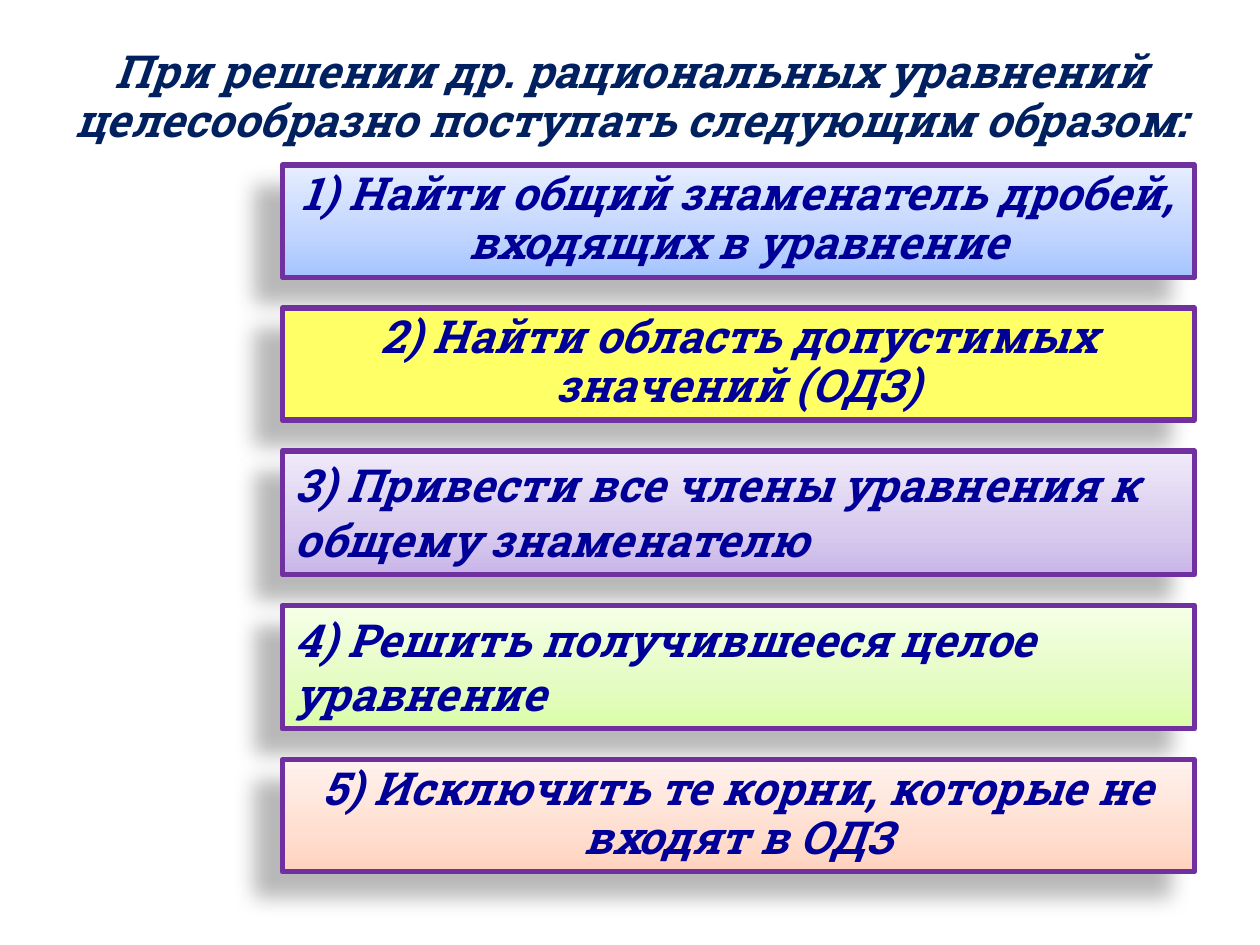
from lxml import etree
from pptx import Presentation
from pptx.dml.color import RGBColor
from pptx.enum import shapes, text
from pptx.oxml import ns
from pptx.util import Pt

NAVY = RGBColor(0x00, 0x20, 0x60)
BLUE = RGBColor(0x00, 0x00, 0x99)
PURPLE = RGBColor(0x70, 0x30, 0xA0)
YELLOW = RGBColor(0xFF, 0xFF, 0x66)
SKY = [RGBColor(0xA4, 0xC4, 0xFF), RGBColor(0xBF, 0xD4, 0xFF), RGBColor(0xE6, 0xEE, 0xFF)]
LILAC = [RGBColor(0xC9, 0xB5, 0xE8), RGBColor(0xD8, 0xCB, 0xEE), RGBColor(0xF0, 0xEA, 0xF9)]
LIME = [RGBColor(0xDA, 0xFD, 0xA7), RGBColor(0xE4, 0xFC, 0xC2), RGBColor(0xF5, 0xFF, 0xE7)]
PEACH = [RGBColor(0xFF, 0xD2, 0xBD), RGBColor(0xFF, 0xDE, 0xD0), RGBColor(0xFF, 0xF2, 0xED)]

LEFT, WIDTH, GAP = 161.3, 521.3, 17.6
TIGHT, LOOSE = 64.1, 70.6


def write(shape, words, color, center):
    frame = shape.text_frame
    frame.text = words
    frame.word_wrap = True
    frame.auto_size = text.MSO_AUTO_SIZE.SHAPE_TO_FIT_TEXT
    frame.vertical_anchor = text.MSO_ANCHOR.TOP
    para = frame.paragraphs[0]
    para.alignment = text.PP_ALIGN.CENTER if center else text.PP_ALIGN.LEFT
    para.line_spacing = 0.9 if center else 1.0
    font = para.runs[0].font
    font.name = "Roboto Slab"
    font.size = Pt(26)
    font.bold = font.italic = True
    font.color.rgb = color


def add(parent, tag, **attrs):
    return etree.SubElement(parent, ns.qn(tag), attrs)


deck = Presentation()
deck.slide_width, deck.slide_height = Pt(720), Pt(540)
slide = deck.slides.add_slide(deck.slide_layouts[5])

title = slide.shapes.title
title.left, title.top, title.width, title.height = Pt(-14.4), Pt(24.5), Pt(751), Pt(TIGHT)
write(title, "При решении др. рациональных уравнений целесообразно поступать следующим образом:", NAVY, True)

steps = [
    ("1) Найти общий знаменатель дробей, входящих в уравнение", SKY, True),
    ("2) Найти область допустимых значений (ОДЗ)", YELLOW, True),
    ("3) Привести все члены уравнения к общему знаменателю", LILAC, False),
    ("4) Решить получившееся целое уравнение", LIME, False),
    ("5) Исключить те корни, которые не входят в ОДЗ", PEACH, True),
]
top = 94.3
for words, paint, center in steps:
    height = TIGHT if center else LOOSE
    box = slide.shapes.add_shape(shapes.MSO_SHAPE.RECTANGLE, Pt(LEFT), Pt(top), Pt(WIDTH), Pt(height))
    if paint is YELLOW:
        box.fill.solid()
        box.fill.fore_color.rgb = paint
    else:
        box.fill.gradient()
        box.fill.gradient_angle = 90
        stops = box._element.spPr.find(".//" + ns.qn("a:gsLst"))
        for stop in list(stops):
            stops.remove(stop)
        for place, tint in zip((0, 35, 100), paint):
            stop = add(stops, "a:gs", pos=str(place * 1000))
            add(stop, "a:srgbClr", val=str(tint))
    box.line.color.rgb = PURPLE
    box.line.width = Pt(3)
    box.shadow.inherit = False
    glow = add(box._element.spPr.find(ns.qn("a:effectLst")), "a:outerShdw",
               blurRad=str(Pt(11.8)), dist=str(Pt(19.7)), dir=str(141 * 60000),
               algn="ctr", rotWithShape="0")
    shade = add(glow, "a:srgbClr", val="000000")
    add(shade, "a:alpha", val="28000")
    write(box, words, BLUE, center)
    top += height + GAP

deck.save("out.pptx")
